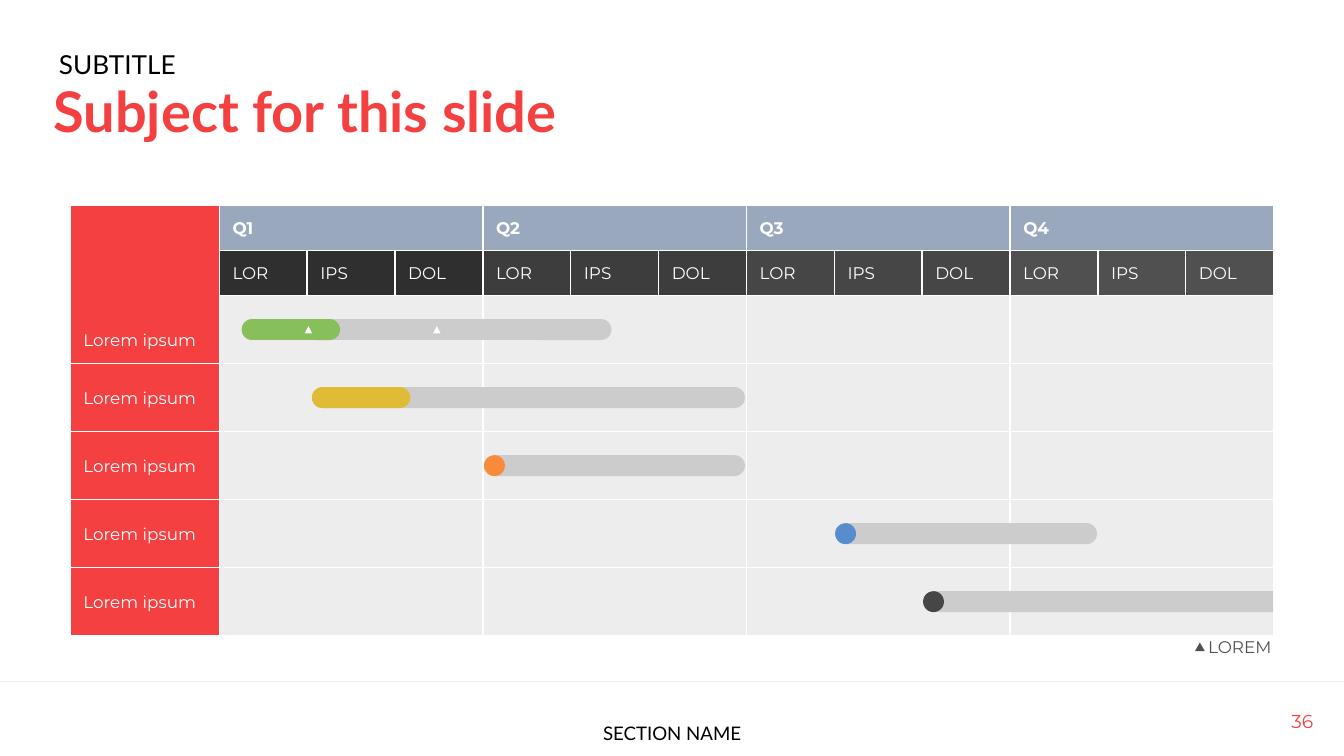
from pptx import Presentation
from pptx.dml.color import RGBColor
from pptx.enum.shapes import MSO_SHAPE
from pptx.enum.text import MSO_ANCHOR, PP_ALIGN
from pptx.util import Pt

WHITE = RGBColor(0xFF, 0xFF, 0xFF)
BLACK = RGBColor(0x00, 0x00, 0x00)
RED = RGBColor(0xF4, 0x40, 0x40)
SLATE = RGBColor(0x9A, 0xA8, 0xBD)
CELL_GRAY = RGBColor(0xED, 0xED, 0xED)
BAR_GRAY = RGBColor(0xCC, 0xCC, 0xCC)
RULE_GRAY = RGBColor(0xEF, 0xEF, 0xEF)
GREEN = RGBColor(0x87, 0xBF, 0x5B)
YELLOW = RGBColor(0xE0, 0xBB, 0x36)
ORANGE = RGBColor(0xF9, 0x8A, 0x3A)
BLUE = RGBColor(0x57, 0x8D, 0xCC)
CHARCOAL = RGBColor(0x46, 0x46, 0x46)
DARK_GRAY = RGBColor(0x50, 0x50, 0x50)
MONTH_FILLS = [RGBColor(0x2F, 0x2F, 0x2F), RGBColor(0x3D, 0x3D, 0x3D), CHARCOAL, DARK_GRAY]

presentation = Presentation()
presentation.slide_width = Pt(720)
presentation.slide_height = Pt(405)
slide = presentation.slides.add_slide(presentation.slide_layouts[6])


def add_block(kind, left, top, width, height, fill, line=None):
    shape = slide.shapes.add_shape(kind, Pt(left), Pt(top), Pt(width), Pt(height))
    shape.shadow.inherit = False
    shape.fill.solid()
    shape.fill.fore_color.rgb = fill
    if line is None:
        shape.line.fill.background()
    else:
        shape.line.color.rgb = line
        shape.line.width = Pt(0.75)
    return shape


def write(shape, text, size=9, color=WHITE, font="Montserrat", bold=False,
          align=PP_ALIGN.LEFT, anchor=MSO_ANCHOR.MIDDLE):
    frame = shape.text_frame
    frame.word_wrap = True
    frame.vertical_anchor = anchor
    frame.margin_left = frame.margin_right = Pt(7.2)
    frame.margin_top = frame.margin_bottom = Pt(7.2)
    paragraph = frame.paragraphs[0]
    paragraph.text = text
    paragraph.alignment = align
    paragraph.font.size = Pt(size)
    paragraph.font.name = font
    paragraph.font.bold = bold
    paragraph.font.color.rgb = color
    return paragraph


# Footer
add_block(MSO_SHAPE.RECTANGLE, -3, 365, 726, 47.5, WHITE, RULE_GRAY)
page_number = slide.shapes.add_textbox(Pt(667.4), Pt(373), Pt(43.2), Pt(26.6))
write(page_number, "36", 10, RED, align=PP_ALIGN.RIGHT)
section = slide.shapes.add_textbox(Pt(265), Pt(373.7), Pt(190), Pt(18))
paragraph = write(section, "SECTION NAME", 10, BLACK, "Lato",
                  align=PP_ALIGN.CENTER, anchor=MSO_ANCHOR.TOP)
paragraph.line_spacing = 1.5
paragraph.space_after = Pt(12)

# Subtitle and title
subtitle = slide.shapes.add_textbox(Pt(24.5), Pt(18.7), Pt(279.4), Pt(31))
write(subtitle, "SUBTITLE", 14, BLACK, "Lato", anchor=MSO_ANCHOR.TOP)
title = slide.shapes.add_textbox(Pt(21.6), Pt(33.8), Pt(522.7), Pt(31))
write(title, "Subject for this slide", 30, RED, "Lato", True, anchor=MSO_ANCHOR.TOP)

# Schedule grid
LABEL_LEFT, LABEL_WIDTH = 37.6, 79.9
GRID_LEFT, QUARTER_WIDTH = 117.5, 141.2
MONTH_WIDTH = QUARTER_WIDTH / 3
GRID_TOP, HEADER_HEIGHT = 110.1, 24.1
ROWS, ROW_HEIGHT = 5, 36.45
BODY_TOP = GRID_TOP + 2 * HEADER_HEIGHT

for quarter, month_fill in enumerate(MONTH_FILLS):
    left = GRID_LEFT + quarter * QUARTER_WIDTH
    for row in range(ROWS):
        add_block(MSO_SHAPE.RECTANGLE, left, BODY_TOP + row * ROW_HEIGHT,
                  QUARTER_WIDTH, ROW_HEIGHT, CELL_GRAY, WHITE)
    header = add_block(MSO_SHAPE.RECTANGLE, left, GRID_TOP,
                       QUARTER_WIDTH, HEADER_HEIGHT, SLATE, WHITE)
    write(header, f"Q{quarter + 1}", bold=True)
    for month, name in enumerate(["LOR", "IPS", "DOL"]):
        header = add_block(MSO_SHAPE.RECTANGLE, left + month * MONTH_WIDTH,
                           GRID_TOP + HEADER_HEIGHT, MONTH_WIDTH, HEADER_HEIGHT,
                           month_fill, WHITE)
        write(header, name)

# Row labels; the first one also spans the two header rows
for row in range(ROWS):
    top = BODY_TOP + row * ROW_HEIGHT if row else GRID_TOP
    bottom = BODY_TOP + (row + 1) * ROW_HEIGHT
    label = add_block(MSO_SHAPE.RECTANGLE, LABEL_LEFT, top, LABEL_WIDTH,
                      bottom - top, RED, WHITE)
    write(label, "Lorem ipsum", anchor=MSO_ANCHOR.MIDDLE if row else MSO_ANCHOR.BOTTOM)

# Task bars: start, end of progress, end of task, progress colour, end rounding
BAR_HEIGHT = 11.2
tasks = [
    (129.5, 182.2, 327.6, GREEN, 0.5),
    (167.1, 219.8, 399.1, YELLOW, 0.5),
    (259.3, 270.5, 399.1, ORANGE, 0.5),
    (447.4, 458.6, 587.7, BLUE, 0.5),
    (494.5, 505.7, 682, CHARCOAL, 0),
]
for row, (start, progress, end, color, rounding) in enumerate(tasks):
    middle = BODY_TOP + (row + 0.5) * ROW_HEIGHT
    for stop, fill, end_round in [(end, BAR_GRAY, rounding), (progress, color, 0.5)]:
        length = stop - start
        # Upright shape turned on its side, so its top becomes the left end
        bar = add_block(MSO_SHAPE.ROUND_2_SAME_RECTANGLE,
                        (start + stop - BAR_HEIGHT) / 2, middle - length / 2,
                        BAR_HEIGHT, length, fill)
        bar.rotation = 270
        bar.adjustments[0] = 0.5
        bar.adjustments[1] = end_round

# Milestones on the first task
for left in (163.3, 232.1):
    add_block(MSO_SHAPE.ISOSCELES_TRIANGLE, left, 174.7, 3.9, 3.9, WHITE)

# Legend
add_block(MSO_SHAPE.ISOSCELES_TRIANGLE, 640.2, 344.2, 5.2, 4.6, DARK_GRAY)
legend = slide.shapes.add_textbox(Pt(640.2), Pt(342.8), Pt(52.6), Pt(8))
write(legend, "LOREM", color=DARK_GRAY)

presentation.save("out.pptx")
